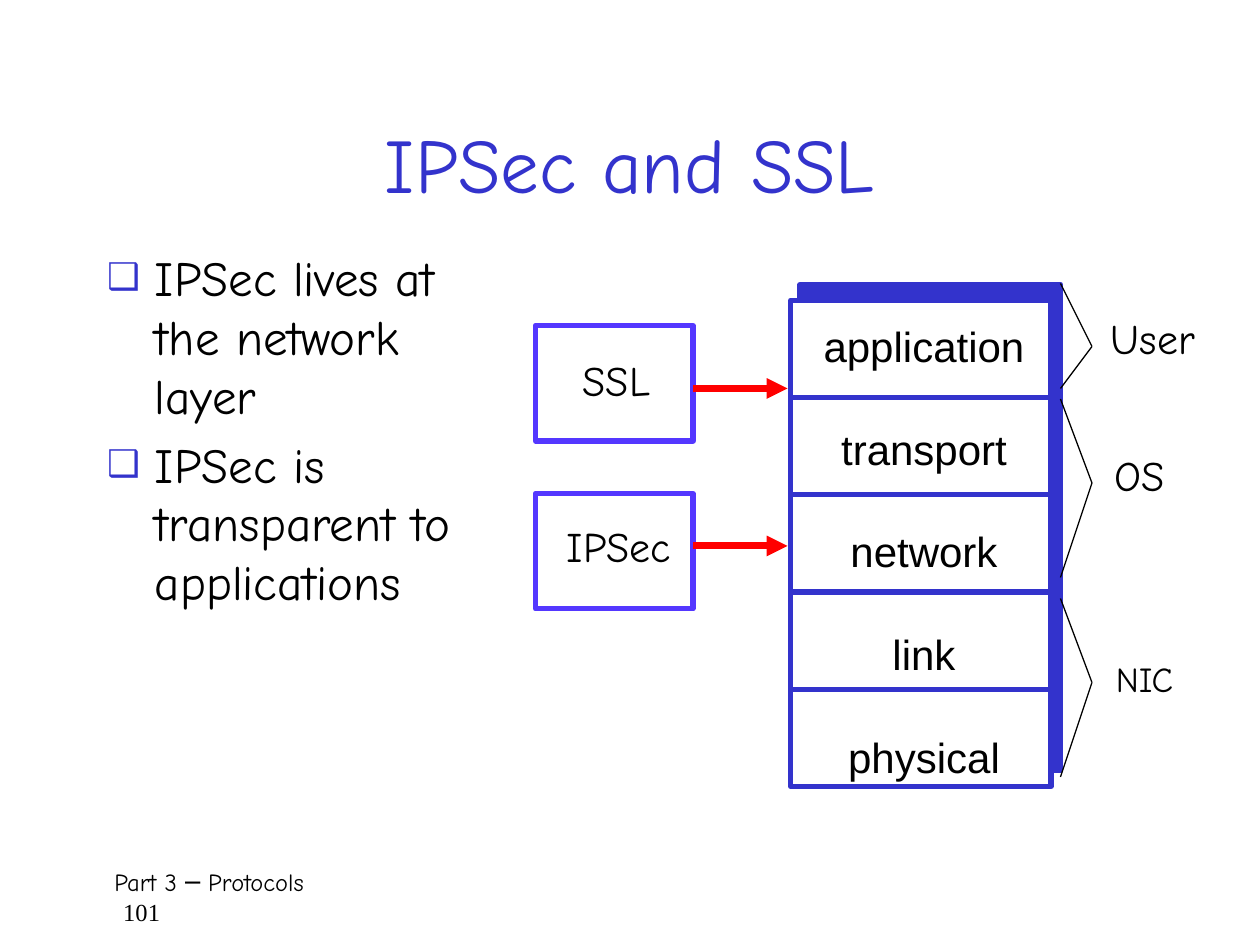
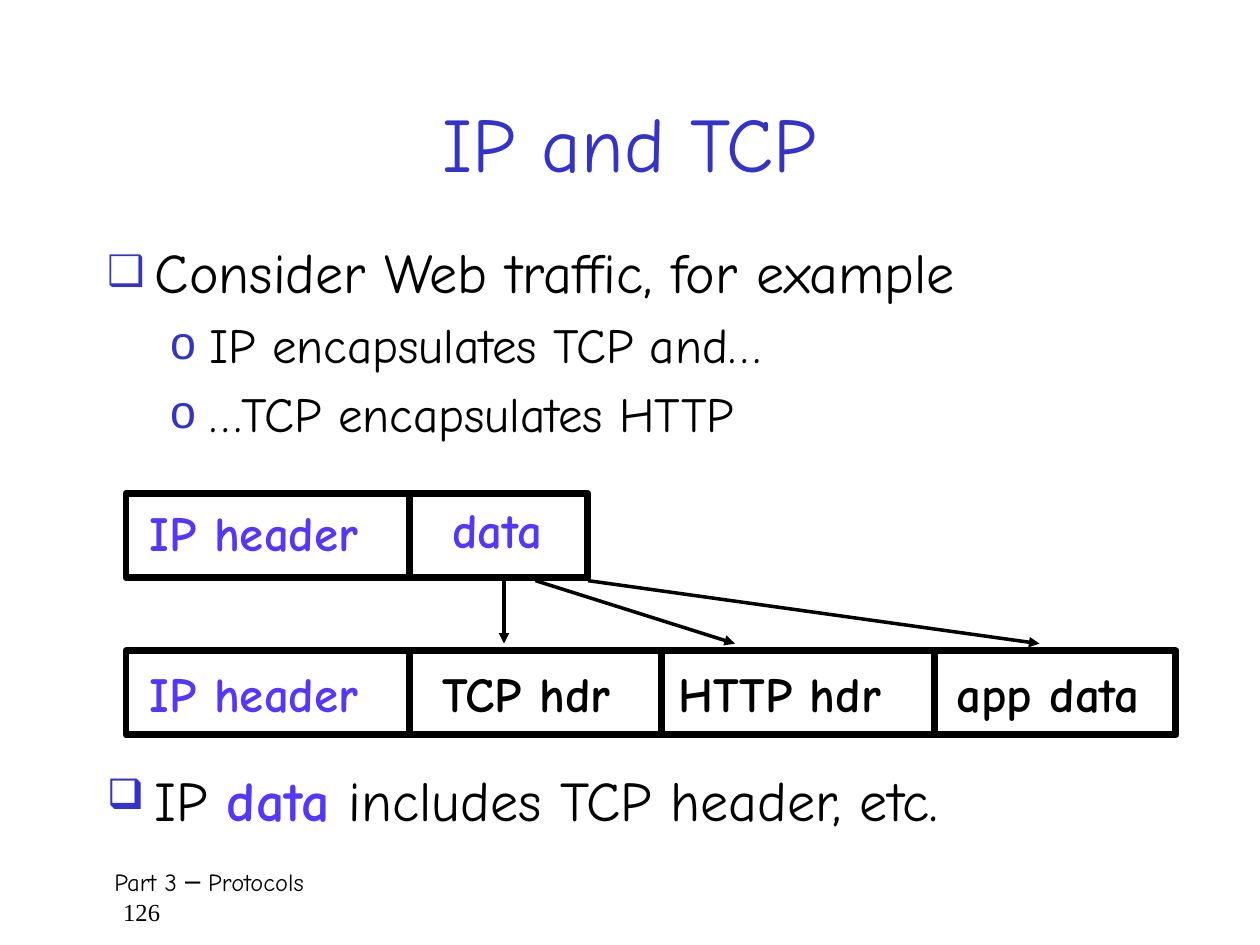
from dataclasses import dataclass
from itertools import pairwise

from lxml.etree import SubElement
from pptx import Presentation
from pptx.dml.color import RGBColor
from pptx.enum.shapes import MSO_CONNECTOR as Connector, MSO_SHAPE as Preset
from pptx.enum.text import MSO_ANCHOR as Anchor, MSO_AUTO_SIZE as AutoSize, PP_ALIGN as Align
from pptx.oxml.ns import qn
from pptx.util import Inches, Pt

COLUMNS, ROWS = 120, 90
WIDTH, HEIGHT = Inches(10), Inches(7.5)

BLACK = RGBColor(0x00, 0x00, 0x00)
WHITE = RGBColor(0xFF, 0xFF, 0xFF)
BLUE = RGBColor(0x33, 0x33, 0xCC)
VIOLET = RGBColor(0x54, 0x37, 0xFF)
RED = RGBColor(0xFF, 0x00, 0x00)
COMIC, ARIAL, TIMES = "Comic Neue", "Arial", "Times New Roman"


@dataclass(frozen=True)
class Area:
    left: float
    top: float
    width: float
    height: float

    def emu(self) -> tuple[int, int, int, int]:
        return column(self.left), row(self.top), column(self.width), row(self.height)


@dataclass(frozen=True)
class Style:
    size: float
    color: RGBColor = BLACK
    font: str = COMIC
    bold: bool = False


@dataclass(frozen=True)
class Label:
    text: str
    area: Area
    style: Style
    align: Align = Align.LEFT


@dataclass(frozen=True)
class Stroke:
    color: RGBColor
    width: float
    arrow: bool = False


@dataclass(frozen=True)
class Bullet:
    mark: str
    percent: int
    margin: float
    indent: float


@dataclass(frozen=True)
class Item:
    runs: tuple[tuple[str, Style], ...]
    level: int = 0


BULLETS = (Bullet("❑", 75, 0.38, -0.38), Bullet("o", 95, 0.81, -0.31))
TITLE_STYLE = Style(44, BLUE)
TEXT_28, TEXT_32 = Style(28), Style(32)
TEXT_24, TEXT_20 = Style(24), Style(20)
VIOLET_BOLD, BLACK_BOLD = Style(28, VIOLET, bold=True), Style(28, bold=True)
FRAME, LAYER_LINE = Stroke(BLACK, 4), Stroke(BLUE, 3)
PROTOCOL_LINE, BRACKET = Stroke(VIOLET, 3), Stroke(BLACK, 0.75)
RED_ARROW, BLACK_ARROW = Stroke(RED, 4, True), Stroke(BLACK, 2, True)


def column(count: float) -> int:
    return round(WIDTH * count / COLUMNS)


def row(count: float) -> int:
    return round(HEIGHT * count / ROWS)


def add_run(paragraph, text: str, style: Style) -> None:
    run = paragraph.add_run()
    run.text = text
    run.font.name = style.font
    run.font.size = Pt(style.size)
    run.font.bold = style.bold
    run.font.color.rgb = style.color


def next_paragraph(frame, index: int):
    return frame.add_paragraph() if index else frame.paragraphs[0]


def add_frame(slide, area: Area, wrap: bool = False):
    frame = slide.shapes.add_textbox(*area.emu()).text_frame
    frame.word_wrap = wrap
    return frame


def add_label(slide, label: Label) -> None:
    paragraph = add_frame(slide, label.area).paragraphs[0]
    paragraph.alignment = label.align
    add_run(paragraph, label.text, label.style)


def set_margin(paragraph, margin: float, indent: float = 0):
    properties = paragraph._p.get_or_add_pPr()
    properties.set("marL", str(Inches(margin)))
    properties.set("indent", str(Inches(indent)))
    return properties


def fill_list(frame, items: list[Item]) -> None:
    for index, item in enumerate(items):
        paragraph = next_paragraph(frame, index)
        paragraph.level = item.level
        bullet = BULLETS[item.level]
        properties = set_margin(paragraph, bullet.margin, bullet.indent)
        before = SubElement(properties, qn("a:spcBef"))
        SubElement(before, qn("a:spcPct"), val="20000")
        color = SubElement(properties, qn("a:buClr"))
        SubElement(color, qn("a:srgbClr"), val=str(BLUE))
        SubElement(properties, qn("a:buSzPct"), val=str(bullet.percent * 1000))
        SubElement(properties, qn("a:buChar"), char=bullet.mark)
        for text, style in item.runs:
            add_run(paragraph, text, style)


def add_box(slide, area: Area, stroke: Stroke, fill: RGBColor | None = None) -> None:
    shape = slide.shapes.add_shape(Preset.RECTANGLE, *area.emu())
    shape.shadow.inherit = False
    if fill is None:
        shape.fill.background()
    else:
        shape.fill.solid()
        shape.fill.fore_color.rgb = fill
    shape.line.color.rgb = stroke.color
    shape.line.width = Pt(stroke.width)


def add_line(slide, start: tuple[float, float], end: tuple[float, float], stroke: Stroke) -> None:
    line = slide.shapes.add_connector(
        Connector.STRAIGHT, column(start[0]), row(start[1]), column(end[0]), row(end[1])
    )
    line.line.color.rgb = stroke.color
    line.line.width = Pt(stroke.width)
    if stroke.arrow:
        SubElement(line.line._get_or_add_ln(), qn("a:tailEnd"), type="triangle")
    SubElement(line._element.spPr, qn("a:effectLst"))


def add_footer(slide, number: str) -> None:
    frame = add_frame(slide, Area(9, 82, 103, 6), wrap=True)
    parts = (("Part 3 ─ Protocols", COMIC, 0.06), (number, TIMES, 0.13))
    for index, (text, font, margin) in enumerate(parts):
        paragraph = next_paragraph(frame, index)
        set_margin(paragraph, margin)
        add_run(paragraph, text, Style(14, font=font))


def place(placeholder, area: Area):
    placeholder.left, placeholder.top, placeholder.width, placeholder.height = area.emu()
    placeholder.text_frame.auto_size = AutoSize.NONE
    return placeholder.text_frame


def add_slide(presentation, title: str, title_top: float, number: str, body: Area, items: list[Item]):
    slide = presentation.slides.add_slide(presentation.slide_layouts[1])
    frame = place(slide.shapes.title, Area(9, title_top, 102, 15))
    frame.vertical_anchor = Anchor.MIDDLE
    frame.paragraphs[0].alignment = Align.CENTER
    add_run(frame.paragraphs[0], title, TITLE_STYLE)
    fill_list(place(slide.placeholders[1], body), items)
    add_footer(slide, number)
    return slide


def add_layer_stack(slide) -> None:
    layers = ("application", "transport", "network", "link", "physical")
    stack = Area(75.3, 28.6, 24.8, 46.3)
    add_box(slide, Area(76.2, 27.1, stack.width, stack.height), LAYER_LINE, BLUE)
    add_box(slide, stack, LAYER_LINE, WHITE)
    frame = add_frame(slide, Area(77.2, 29.9, 21.6, 44.3))
    for index, layer in enumerate(layers):
        paragraph = next_paragraph(frame, index)
        paragraph.alignment = Align.CENTER
        if index:
            paragraph.space_before = Pt(30)
            y = stack.top + index * stack.height / len(layers)
            add_line(slide, (stack.left, y), (stack.left + stack.width, y), LAYER_LINE)
        add_run(paragraph, layer, Style(24, font=ARIAL))


def build_ipsec_slide(presentation) -> None:
    points = ("IPSec lives at the network layer", "IPSec is transparent to applications")
    items = [Item(((point, TEXT_28),)) for point in points]
    slide = add_slide(presentation, "IPSec and SSL", 8, "101", Area(9, 23, 39, 56), items)
    add_layer_stack(slide)

    for box_top, arrow_y in ((31, 37), (47, 52)):
        add_box(slide, Area(51, box_top, 15, 11), PROTOCOL_LINE)
        add_line(slide, (66, arrow_y), (75, arrow_y), RED_ARROW)

    for levels in ((27, 33, 37), (38, 46, 55), (57, 65, 74)):
        for start, end in pairwise(zip((101, 104, 101), levels)):
            add_line(slide, start, end, BRACKET)

    for label in (
        Label("SSL", Area(53.6, 33.2, 10.2, 6.8), TEXT_24, Align.CENTER),
        Label("IPSec", Area(52.1, 49, 13.7, 6.8), TEXT_24, Align.CENTER),
        Label("User", Area(104.6, 29.2, 11.4, 6.8), TEXT_24),
        Label("OS", Area(105, 42.2, 8.4, 6.8), TEXT_24),
        Label("NIC", Area(105.1, 62, 8.9, 5.9), TEXT_20),
    ):
        add_label(slide, label)


def add_packet(slide, area: Area, dividers: tuple[float, ...], labels: tuple[Label, ...]) -> None:
    add_box(slide, area, FRAME)
    top = area.top + 0.3
    for x in dividers:
        add_line(slide, (x, top), (x, top + area.height), FRAME)
    for label in labels:
        add_label(slide, label)


def build_tcp_slide(presentation) -> None:
    items = [
        Item((("Consider Web traffic, for example", TEXT_32),)),
        Item((("IP encapsulates TCP and…", TEXT_28),), 1),
        Item((("…TCP encapsulates HTTP", TEXT_28),), 1),
    ]
    slide = add_slide(presentation, "IP and TCP", 6, "126", Area(9, 22, 101, 25), items)

    add_packet(slide, Area(12, 47, 44, 8), (39,), (
        Label("IP header", Area(13.1, 47.3, 25, 7.7), VIOLET_BOLD),
        Label("data", Area(41.9, 47, 12.6, 7.7), VIOLET_BOLD),
    ))
    add_packet(slide, Area(12, 62, 100, 8), (39, 63, 89), (
        Label("IP header", Area(13.1, 62.6, 25, 7.7), VIOLET_BOLD),
        Label("TCP hdr", Area(41, 62.6, 20.8, 7.7), BLACK_BOLD),
        Label("HTTP hdr", Area(63.4, 62.6, 24.7, 7.7), BLACK_BOLD),
        Label("app data", Area(89.9, 62.6, 22.2, 7.7), BLACK_BOLD),
    ))
    for start, end in ((48, 48), (51, 70), (56, 99)):
        add_line(slide, (start, 55.3), (end, 61.3), BLACK_ARROW)

    closing = add_frame(slide, Area(9, 73, 100, 9), wrap=True)
    fill_list(closing, [Item((
        ("IP ", TEXT_32),
        ("data", Style(32, VIOLET, bold=True)),
        (" includes TCP header, etc.", TEXT_32),
    ))])
    closing.paragraphs[0].line_spacing = 0.9


def main() -> None:
    presentation = Presentation()
    presentation.slide_width, presentation.slide_height = WIDTH, HEIGHT
    build_ipsec_slide(presentation)
    build_tcp_slide(presentation)
    presentation.save("out.pptx")


if __name__ == "__main__":
    main()
